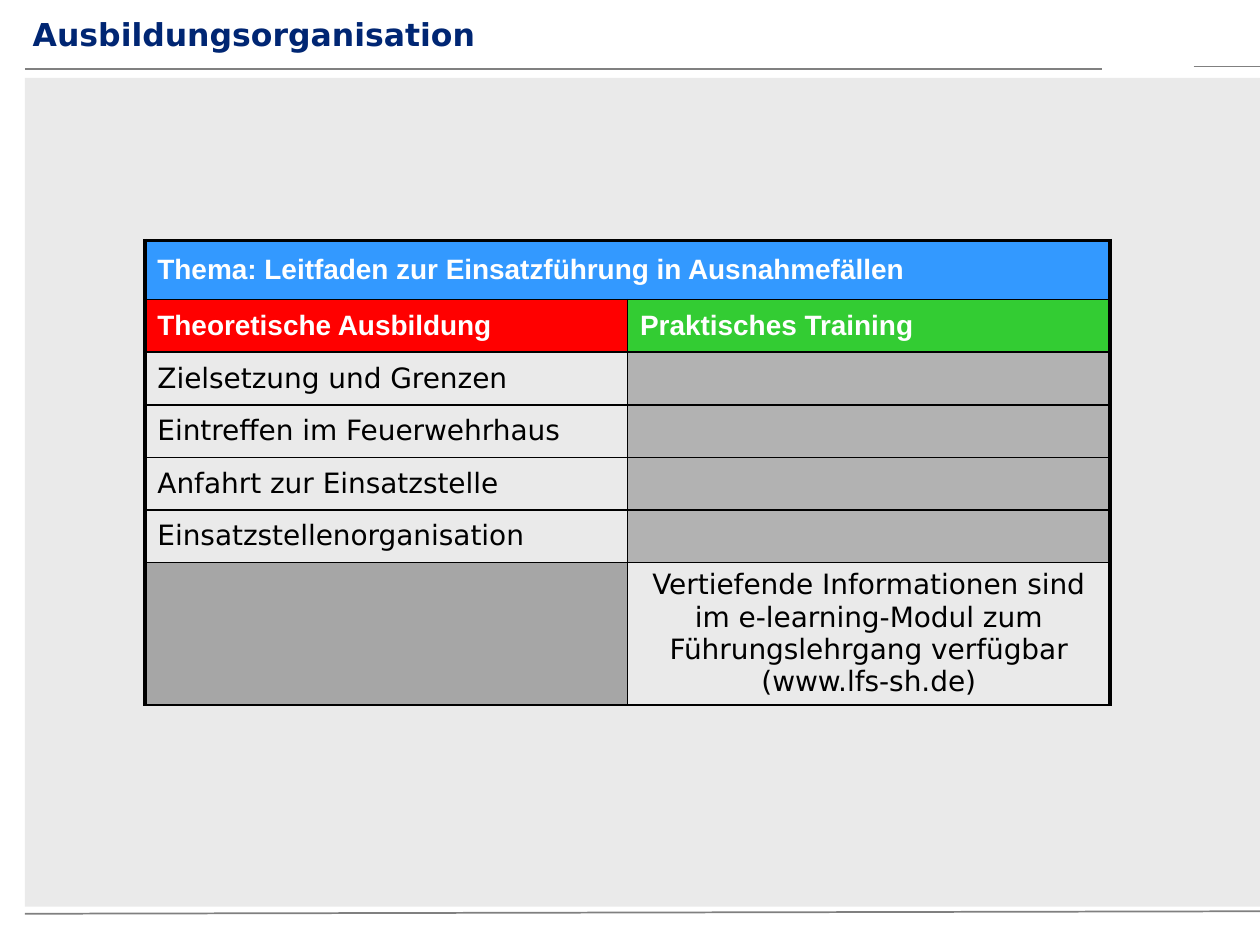
from lxml.etree import SubElement
from pptx import Presentation
from pptx.dml.color import RGBColor
from pptx.enum.shapes import MSO_CONNECTOR, MSO_SHAPE
from pptx.enum.text import MSO_ANCHOR, PP_ALIGN
from pptx.oxml.ns import qn
from pptx.util import Cm, Pt

NAVY = RGBColor(0x00, 0x26, 0x73)
PANEL = RGBColor(0xEA, 0xEA, 0xEA)
RULE = RGBColor(0x80, 0x80, 0x80)
BLUE = RGBColor(0x33, 0x99, 0xFF)
RED = RGBColor(0xFF, 0x00, 0x00)
GREEN = RGBColor(0x33, 0xCC, 0x33)
EMPTY_RIGHT = RGBColor(0xB2, 0xB2, 0xB2)
EMPTY_LEFT = RGBColor(0xA6, 0xA6, 0xA6)
BLACK = RGBColor(0x00, 0x00, 0x00)
WHITE = RGBColor(0xFF, 0xFF, 0xFF)

BODY_FONT = "DejaVu Sans"
HEAD_FONT = "Arial"
THIN, THICK = Pt(1), Pt(2.25)

THEORY = [
    "Zielsetzung und Grenzen",
    "Eintreffen im Feuerwehrhaus",
    "Anfahrt zur Einsatzstelle",
    "Einsatzstellenorganisation",
]
MORE_INFO = ("Vertiefende Informationen sind im e-learning-Modul zum "
             "Führungslehrgang verfügbar (www.lfs-sh.de)")


class SlideBuilder:
    def __init__(self, page):
        self.page = page

    def style(self, para, font_name, size, color, bold=False):
        font = para.font
        font.name, font.size, font.bold = font_name, Pt(size), bold
        font.color.rgb = color

    def title(self, text, left, top, width, height):
        box = self.page.shapes.title
        box.left, box.top, box.width, box.height = map(Cm, (left, top, width, height))
        frame = box.text_frame
        frame.margin_left = frame.margin_right = frame.margin_top = frame.margin_bottom = 0
        frame.vertical_anchor = MSO_ANCHOR.TOP
        frame.text = text
        para = frame.paragraphs[0]
        para.alignment = PP_ALIGN.LEFT
        self.style(para, BODY_FONT, 18, NAVY, bold=True)

    def panel(self, left, top, width, height):
        shape = self.page.shapes.add_shape(
            MSO_SHAPE.RECTANGLE, Cm(left), Cm(top), Cm(width), Cm(height))
        shape.shadow.inherit = False
        shape.fill.solid()
        shape.fill.fore_color.rgb = PANEL
        shape.line.fill.background()

    def rule(self, x1, y1, x2, y2):
        line = self.page.shapes.add_connector(
            MSO_CONNECTOR.STRAIGHT, Cm(x1), Cm(y1), Cm(x2), Cm(y2))
        line.line.color.rgb = RULE
        line.line.width = Pt(1)
        SubElement(line.element.spPr, qn("a:effectLst"))

    def table(self, left, top, column_width, heights):
        frame = self.page.shapes.add_table(
            len(heights), 2, Cm(left), Cm(top), Cm(2 * column_width), Cm(sum(heights)))
        table = frame.table
        table.first_row = table.horz_banding = False
        for column in table.columns:
            column.width = Cm(column_width)
        for row, height in zip(table.rows, heights):
            row.height = Cm(height)
        return table

    def borders(self, cell, left, right, top, bottom):
        properties = cell._tc.get_or_add_tcPr()
        for side, width in zip("LRTB", (left, right, top, bottom)):
            line = SubElement(properties, qn(f"a:ln{side}"), w=str(int(width)))
            fill = SubElement(line, qn("a:solidFill"))
            SubElement(fill, qn("a:srgbClr"), val=str(BLACK))

    def cell(self, cell, text, fill=None, heading=False, centered=False):
        if fill is None:
            cell.fill.background()
        else:
            cell.fill.solid()
            cell.fill.fore_color.rgb = fill
        cell.vertical_anchor = MSO_ANCHOR.MIDDLE
        cell.text = text
        para = cell.text_frame.paragraphs[0]
        para.alignment = PP_ALIGN.CENTER if centered else PP_ALIGN.LEFT
        if heading:
            self.style(para, HEAD_FONT, 16, WHITE, bold=True)
        else:
            self.style(para, BODY_FONT, 16, BLACK)


def add_training_table(builder):
    heights = [1.19] + [1.06] * 5 + [2.87]
    table = builder.table(2.92, 4.85, 9.73, heights)
    for row in range(len(heights)):
        top = THIN if row else THICK
        builder.borders(table.cell(row, 0), THICK, THIN if row else THICK, top, THIN)
        builder.borders(table.cell(row, 1), THIN, THICK, top, THIN)

    topic = table.cell(0, 0)
    topic.merge(table.cell(0, 1))
    builder.cell(topic, "Thema: Leitfaden zur Einsatzführung in Ausnahmefällen",
                 BLUE, heading=True)
    builder.cell(table.cell(1, 0), "Theoretische Ausbildung", RED, heading=True)
    builder.cell(table.cell(1, 1), "Praktisches Training", GREEN, heading=True)
    for row, lesson in enumerate(THEORY, start=2):
        builder.cell(table.cell(row, 0), lesson)
        builder.cell(table.cell(row, 1), "", EMPTY_RIGHT)
    last = len(heights) - 1
    builder.cell(table.cell(last, 0), "", EMPTY_LEFT)
    builder.cell(table.cell(last, 1), MORE_INFO, centered=True)


def main():
    deck = Presentation()
    deck.slide_width, deck.slide_height = Cm(25.4), Cm(19.05)
    builder = SlideBuilder(deck.slides.add_slide(deck.slide_layouts[5]))
    builder.panel(0.5, 1.57, 24.9, 16.71)
    builder.rule(0.5, 1.39, 22.22, 1.39)
    builder.rule(0.5, 18.42, 25.4, 18.37)
    builder.rule(24.06, 1.34, 25.4, 1.34)
    builder.title("Ausbildungsorganisation", 0.66, 0.3, 20.95, 1.04)
    add_training_table(builder)
    deck.save("out.pptx")


if __name__ == "__main__":
    main()
